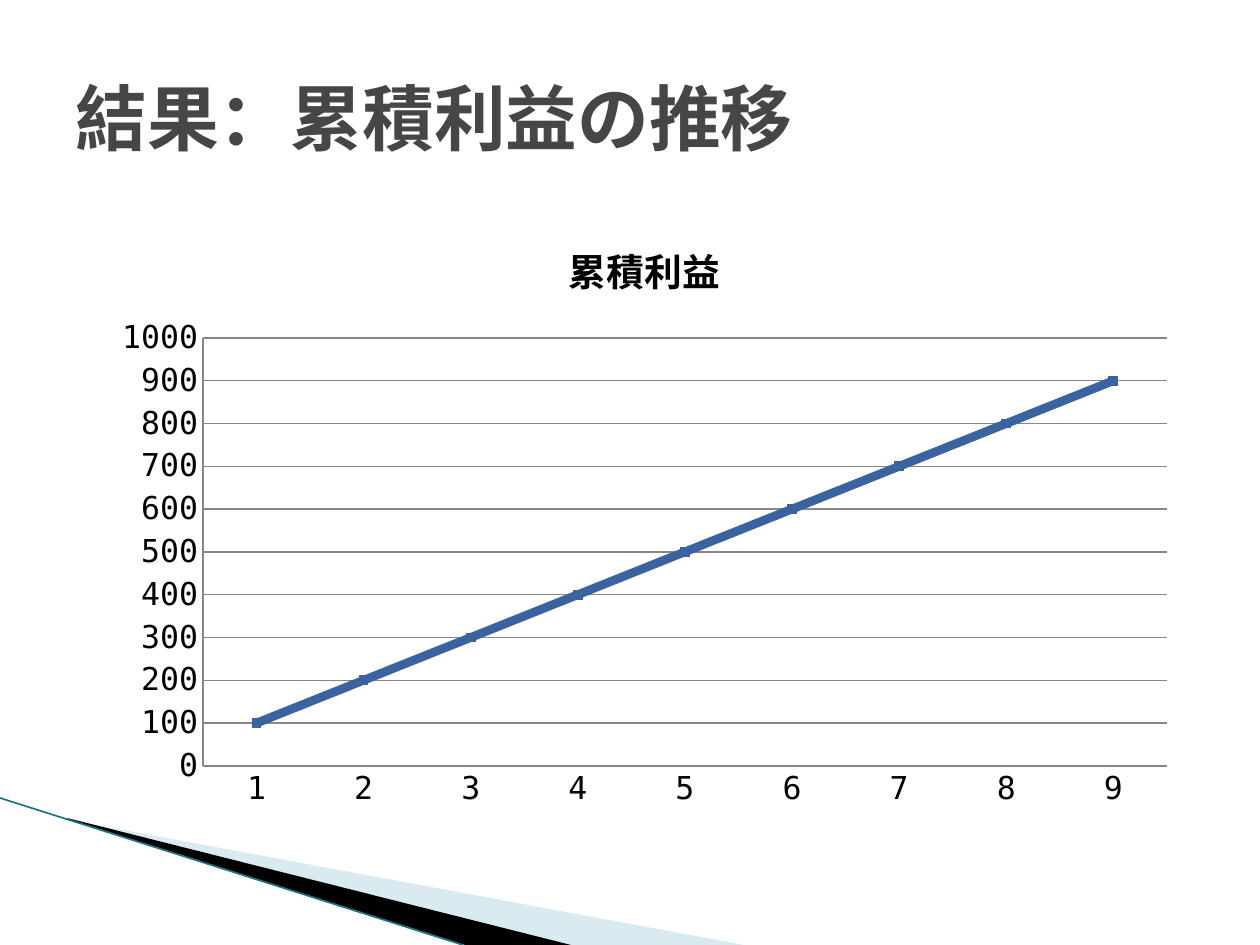
import pptx
import pptx.chart.data
import pptx.dml.color
import pptx.enum.chart
import pptx.enum.shapes
import pptx.enum.text
import pptx.oxml.ns
import pptx.oxml.xmlchemy
import pptx.util

PX = 914400 / 126
FONT = "DejaVu Sans Mono"
COLORS = {"pale": "A0CBDC", "black": "000000", "edge": "1B7587",
          "heading": "464646", "series": "3A63A0", "grid": "878787"}


def px(length):
    return pptx.util.Emu(round(length * PX))


def paint(color_format, name):
    color_format.rgb = pptx.dml.color.RGBColor.from_string(COLORS[name])


deck = pptx.Presentation()
deck.slide_width, deck.slide_height = px(1260), px(945)
slide = deck.slides.add_slide(deck.slide_layouts[6])

# Corner wedges
wedges = [
    ("pale", 40, [(69, 820), (744, 945), (571, 945), (69, 819)]),
    ("black", 100, [(67, 818), (571, 945), (465, 945), (68, 819)]),
]
for name, opacity, points in wedges:
    outline = slide.shapes.build_freeform(*points[0], scale=PX)
    outline.add_line_segments(points[1:], close=True)
    wedge = outline.convert_to_shape()
    wedge.shadow.inherit = False
    wedge.fill.solid()
    paint(wedge.fill.fore_color, name)
    wedge.line.fill.background()
    if opacity < 100:
        tint = wedge._element.spPr.find(".//" + pptx.oxml.ns.qn("a:srgbClr"))
        alpha = pptx.oxml.xmlchemy.OxmlElement("a:alpha")
        alpha.set("val", str(opacity * 1000))
        tint.append(alpha)

# Edge line along the wedges
edge = slide.shapes.add_connector(
    pptx.enum.shapes.MSO_CONNECTOR.STRAIGHT, px(0), px(798), px(463), px(945))
paint(edge.line.color, "edge")
edge.line.width = pptx.util.Pt(0.95)
edge._element.spPr.append(pptx.oxml.xmlchemy.OxmlElement("a:effectLst"))

# Heading
heading = slide.shapes.add_textbox(px(63), px(38), px(1134), px(158)).text_frame
heading.word_wrap = True
heading.vertical_anchor = pptx.enum.text.MSO_ANCHOR.MIDDLE
heading_run = heading.paragraphs[0].add_run()
heading_run.text = "結果：累積利益の推移"
heading_run.font.name = FONT
heading_run.font.size = pptx.util.Pt(41)
heading_run.font.bold = True
paint(heading_run.font.color, "heading")

# Cumulative profit chart
profit_data = pptx.chart.data.CategoryChartData()
profit_data.categories = [str(period) for period in range(1, 10)]
profit_data.add_series("累積利益", range(100, 1000, 100))
left, top, width, height = 101, 212, 1087, 610
chart = slide.shapes.add_chart(
    pptx.enum.chart.XL_CHART_TYPE.LINE_MARKERS,
    px(left), px(top), px(width), px(height), profit_data).chart
chart.has_legend = False
chart.font.name = FONT
chart.font.size = pptx.util.Pt(18)
paint(chart.font.color, "black")

chart.has_title = True
chart_title = chart.chart_title.text_frame.paragraphs[0].add_run()
chart_title.text = "累積利益"
chart_title.font.name = FONT
chart_title.font.size = pptx.util.Pt(21.6)
chart_title.font.bold = True
paint(chart_title.font.color, "black")

# Axes and grid
for axis in (chart.category_axis, chart.value_axis):
    axis.major_tick_mark = pptx.enum.chart.XL_TICK_MARK.NONE
    axis.minor_tick_mark = pptx.enum.chart.XL_TICK_MARK.NONE
    paint(axis.format.line.color, "grid")
    axis.format.line.width = pptx.util.Pt(0.75)
chart.value_axis.minimum_scale = 0
chart.value_axis.maximum_scale = 1000
chart.value_axis.major_unit = 100
grid_line = chart.value_axis.major_gridlines.format.line
paint(grid_line.color, "grid")
grid_line.width = pptx.util.Pt(0.75)

# Profit line
plot = chart.plots[0]
plot.vary_by_categories = False
profit = plot.series[0]
profit.smooth = True
paint(profit.format.line.color, "series")
profit.format.line.width = pptx.util.Pt(5)
profit.marker.style = pptx.enum.chart.XL_MARKER_STYLE.SQUARE
profit.marker.size = 5
profit.marker.format.fill.solid()
paint(profit.marker.format.fill.fore_color, "series")
profit.marker.format.line.fill.background()

# Fixed inner plot area
plot_area = chart._chartSpace.chart.plotArea
for old_layout in plot_area.findall(pptx.oxml.ns.qn("c:layout")):
    plot_area.remove(old_layout)
layout = pptx.oxml.xmlchemy.OxmlElement("c:layout")
manual = pptx.oxml.xmlchemy.OxmlElement("c:manualLayout")
layout.append(manual)
settings = [("layoutTarget", "inner"), ("xMode", "edge"), ("yMode", "edge"),
            ("x", (203 - left) / width), ("y", (338 - top) / height),
            ("w", 964 / width), ("h", 428 / height)]
for tag, value in settings:
    setting = pptx.oxml.xmlchemy.OxmlElement("c:" + tag)
    setting.set("val", str(value))
    manual.append(setting)
plot_area.insert(0, layout)

deck.save("out.pptx")
